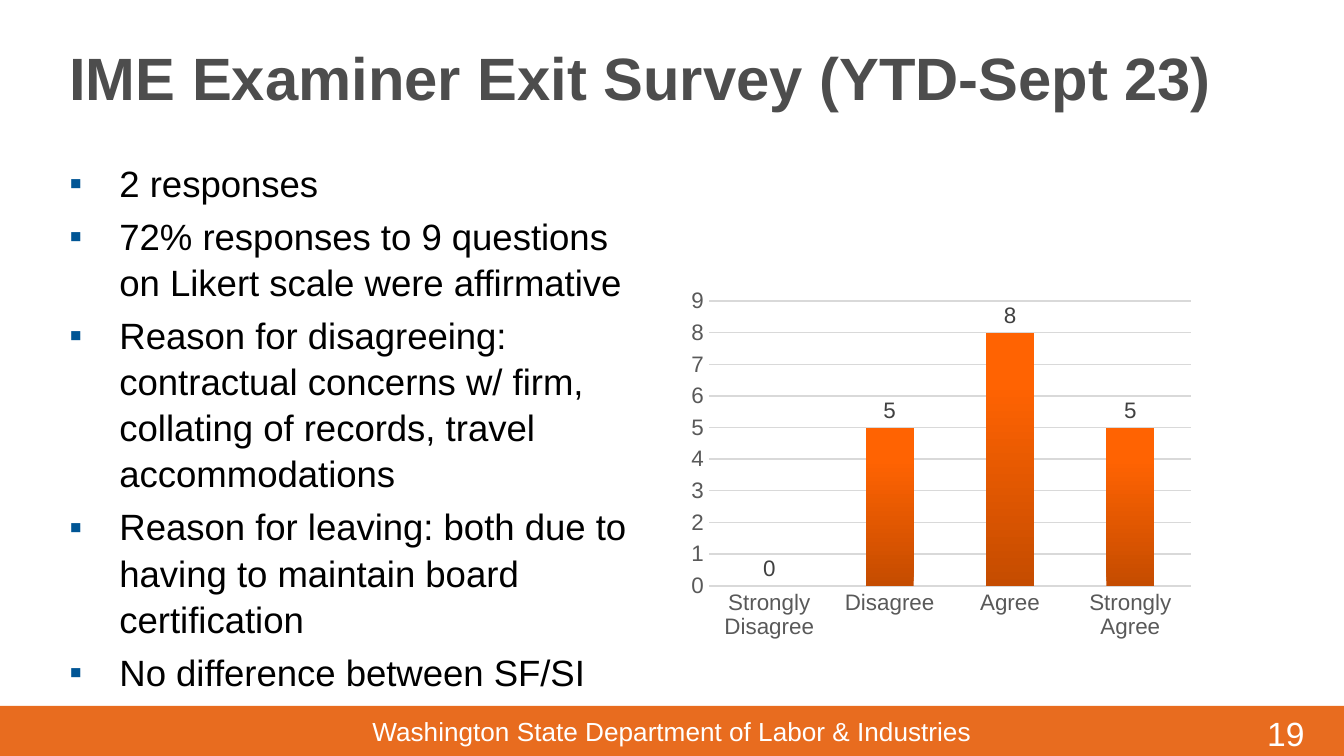
from copy import deepcopy

from lxml.etree import SubElement
from pptx import Presentation
from pptx.chart.data import CategoryChartData
from pptx.dml.color import RGBColor
from pptx.enum.chart import XL_CHART_TYPE as ChartType
from pptx.enum.chart import XL_LABEL_POSITION as LabelPosition
from pptx.enum.chart import XL_TICK_MARK as TickMark
from pptx.enum.shapes import MSO_SHAPE as ShapeKind
from pptx.enum.text import MSO_ANCHOR as Anchor
from pptx.enum.text import MSO_AUTO_SIZE as AutoSize
from pptx.enum.text import PP_ALIGN as Align
from pptx.oxml.ns import qn
from pptx.util import Emu, Pt

SCALE = 914400 / 134.4
FONT = "Arial"
GRID = "D9D9D9"
AXIS_TEXT = "595959"
POINTS = [
    "2 responses",
    "72% responses to 9 questions on Likert scale were affirmative",
    "Reason for disagreeing: contractual concerns w/ firm, "
    "collating of records, travel accommodations",
    "Reason for leaving: both due to having to maintain board certification",
    "No difference between SF/SI",
]
ANSWERS = {"Strongly Disagree": 0, "Disagree": 5, "Agree": 8, "Strongly Agree": 5}
BAR_STOPS = [(0, "C54C00"), (0.8, "FF6302"), (1, "FF6403")]


def px(length):
    return Emu(round(length * SCALE))


def color(value):
    return RGBColor.from_string(value)


def set_font(font, size, value, bold=False):
    font.name = FONT
    font.size = Pt(size)
    font.bold = bold
    font.color.rgb = color(value)


def place(shape, left, top, width, height):
    shape.left, shape.top = px(left), px(top)
    shape.width, shape.height = px(width), px(height)


def add_title(slide, text):
    title = slide.shapes.title
    place(title, 56, 42, 1232, 70)
    frame = title.text_frame
    frame.text = text
    frame.auto_size = AutoSize.NONE
    frame.vertical_anchor = Anchor.MIDDLE
    paragraph = frame.paragraphs[0]
    paragraph.alignment = Align.LEFT
    set_font(paragraph.font, 32, "4D4D4D", bold=True)


def add_bullet(paragraph):
    properties = paragraph._p.get_or_add_pPr()
    properties.set("marL", str(px(50)))
    properties.set("indent", str(-px(50)))
    bullet_color = SubElement(properties, qn("a:buClr"))
    SubElement(bullet_color, qn("a:srgbClr"), val="005595")
    SubElement(properties, qn("a:buFont"), typeface=FONT)
    SubElement(properties, qn("a:buChar"), char="▪")


def add_list(slide, points):
    body = slide.placeholders[1]
    place(body, 56, 152, 594, 520)
    frame = body.text_frame
    frame.text = "\n".join(points)
    frame.auto_size = AutoSize.NONE
    for index, paragraph in enumerate(frame.paragraphs):
        add_bullet(paragraph)
        paragraph.line_spacing = 1.05
        paragraph.space_before = Pt(3.8 if index else 0)
        set_font(paragraph.font, 19.6, "000000")


def add_band(slide):
    band = slide.shapes.add_shape(ShapeKind.RECTANGLE, px(0), px(706), px(1344), px(50))
    band.shadow.inherit = False
    band.fill.solid()
    band.fill.fore_color.rgb = color("E86C1F")
    band.line.fill.background()


def add_label(slide, text, box, size, alignment):
    label = slide.shapes.add_textbox(*map(px, box))
    frame = label.text_frame
    frame.word_wrap = True
    frame.text = text
    paragraph = frame.paragraphs[0]
    paragraph.alignment = alignment
    set_font(paragraph.font, size, "FFFFFF")


def style_axis(axis):
    axis.major_tick_mark = axis.minor_tick_mark = TickMark.NONE
    set_font(axis.tick_labels.font, 12, AXIS_TEXT)


def fill_bars(series):
    fill = series.format.fill
    fill.gradient()
    fill.gradient_angle = 90
    stop_list = series._element.xpath(".//a:gsLst")[0]
    stop_list.append(deepcopy(stop_list[-1]))
    for stop, (position, value) in zip(fill.gradient_stops, BAR_STOPS):
        stop.position = position
        stop.color.rgb = color(value)


def add_answer_chart(slide):
    data = CategoryChartData()
    data.categories = list(ANSWERS)
    data.add_series("Series 1", list(ANSWERS.values()))
    chart = slide.shapes.add_chart(
        ChartType.COLUMN_CLUSTERED, px(681), px(282), px(520), px(364), data
    ).chart
    chart.has_title = False
    chart.has_legend = False
    set_font(chart.font, 10, "000000")

    categories, values = chart.category_axis, chart.value_axis
    style_axis(categories)
    categories.format.line.color.rgb = color(GRID)
    categories.format.line.width = Pt(1)
    style_axis(values)
    values.minimum_scale, values.maximum_scale, values.major_unit = 0, 9, 1
    values.format.line.fill.background()
    values.major_gridlines.format.line.color.rgb = color(GRID)
    values.major_gridlines.format.line.width = Pt(0.75)

    plot = chart.plots[0]
    plot.gap_width = 150
    plot.vary_by_categories = False
    series = plot.series[0]
    fill_bars(series)
    labels = series.data_labels
    labels.show_value = True
    labels.position = LabelPosition.OUTSIDE_END
    set_font(labels.font, 12, "404040")


def main():
    presentation = Presentation()
    presentation.slide_width, presentation.slide_height = px(1344), px(756)
    slide = presentation.slides.add_slide(presentation.slide_layouts[1])
    add_band(slide)
    add_label(slide, "19", (1254, 706, 78, 54), 18, Align.LEFT)
    add_label(slide, "Washington State Department of Labor & Industries",
              (0, 709, 1344, 46), 14, Align.CENTER)
    add_title(slide, "IME Examiner Exit Survey (YTD-Sept 23)")
    add_list(slide, POINTS)
    add_answer_chart(slide)
    presentation.save("out.pptx")


if __name__ == "__main__":
    main()
